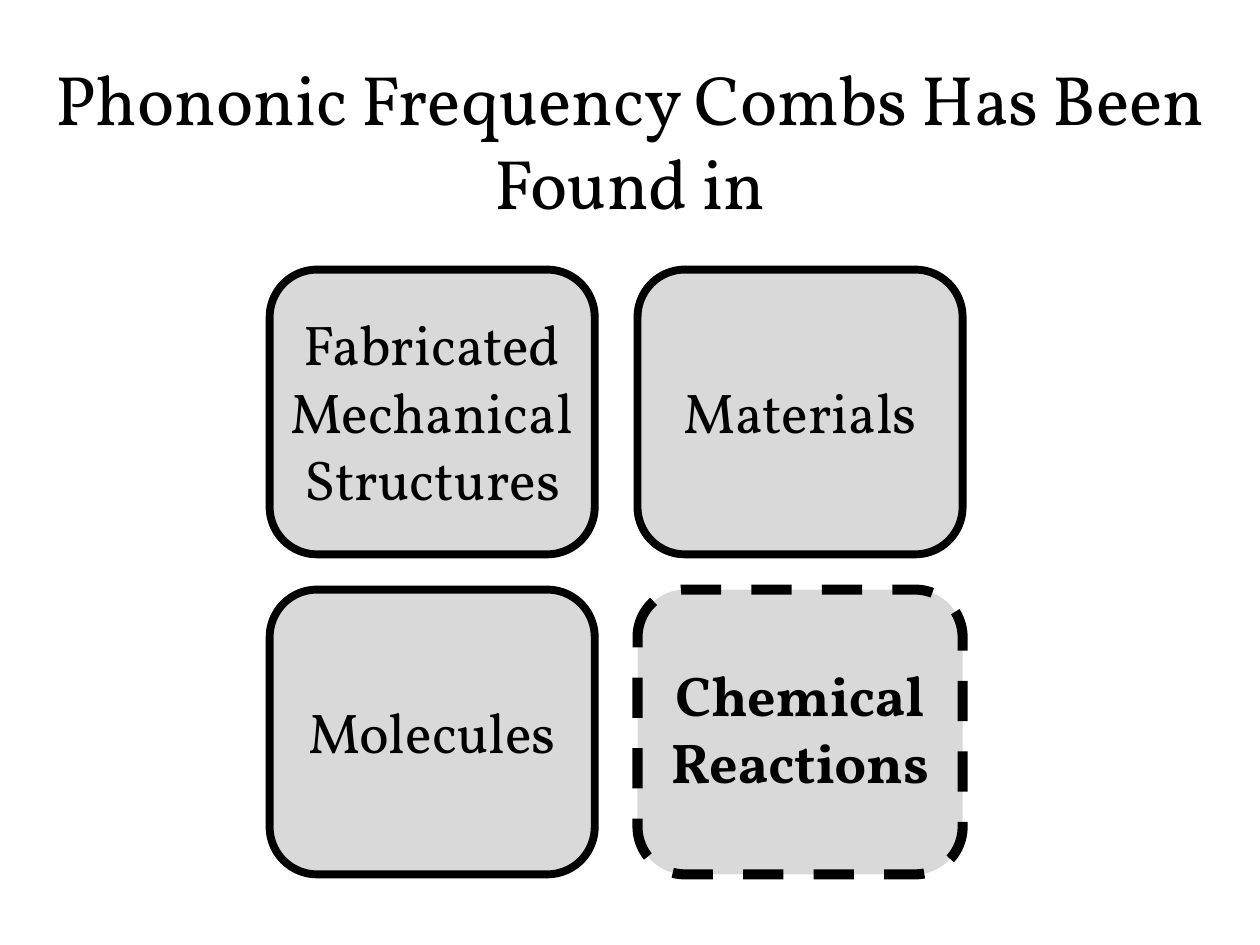
import pptx
import pptx.util
import pptx.dml.color
import pptx.enum.dml
import pptx.enum.shapes
import pptx.enum.text

Inches = pptx.util.Inches
Pt = pptx.util.Pt
COLORS = {"ink": "000000", "card": "D9D9D9"}
FONT = "Vollkorn"


def color(name):
    return pptx.dml.color.RGBColor.from_string(COLORS[name])


def label(text, left, top, width, height, size, bold=False):
    box = slide.shapes.add_textbox(
        Inches(left), Inches(top), Inches(width), Inches(height))
    frame = box.text_frame
    frame.word_wrap = True
    frame.auto_size = pptx.enum.text.MSO_AUTO_SIZE.SHAPE_TO_FIT_TEXT
    frame.text = text
    line = frame.paragraphs[0]
    line.alignment = pptx.enum.text.PP_ALIGN.CENTER
    font = line.runs[0].font
    font.name = FONT
    font.size = Pt(size)
    font.bold = bold
    font.color.rgb = color("ink")


deck = pptx.Presentation()
deck.slide_width = Inches(10)
deck.slide_height = Inches(7.5)
slide = deck.slides.add_slide(deck.slide_layouts[6])

# Two by two grid of cards: text, label top and width, height, key card
left, top = 2.14, 2.14
wide, high = 2.58, 2.26
step_x, step_y = 2.92, 2.54
cards = [
    ("Fabricated Mechanical Structures", 2.41, 3.09, 1.72, False),
    ("Materials", 2.95, 3.09, 0.64, False),
    ("Molecules", 5.49, 3.09, 0.64, False),
    ("Chemical Reactions", 5.19, 2.81, 1.18, True),
]
for i, (text, text_top, text_wide, text_high, key) in enumerate(cards):
    row, col = divmod(i, 2)
    x = left + col * step_x
    y = top + row * step_y
    card = slide.shapes.add_shape(
        pptx.enum.shapes.MSO_SHAPE.ROUNDED_RECTANGLE,
        Inches(x), Inches(y), Inches(wide), Inches(high))
    card.shadow.inherit = False
    card.fill.solid()
    card.fill.fore_color.rgb = color("card")
    card.line.color.rgb = color("ink")
    card.line.width = Pt(5.75 if key else 4.5)
    if key:
        card.line.dash_style = pptx.enum.dml.MSO_LINE.DASH
    # Label centred across its card
    label(text, x + (wide - text_wide) / 2, text_top,
          text_wide, text_high, 32, key)

# Title
label("Phononic Frequency Combs Has Been Found in", 0, 0.39, 10, 1.45, 40)

deck.save("out.pptx")
